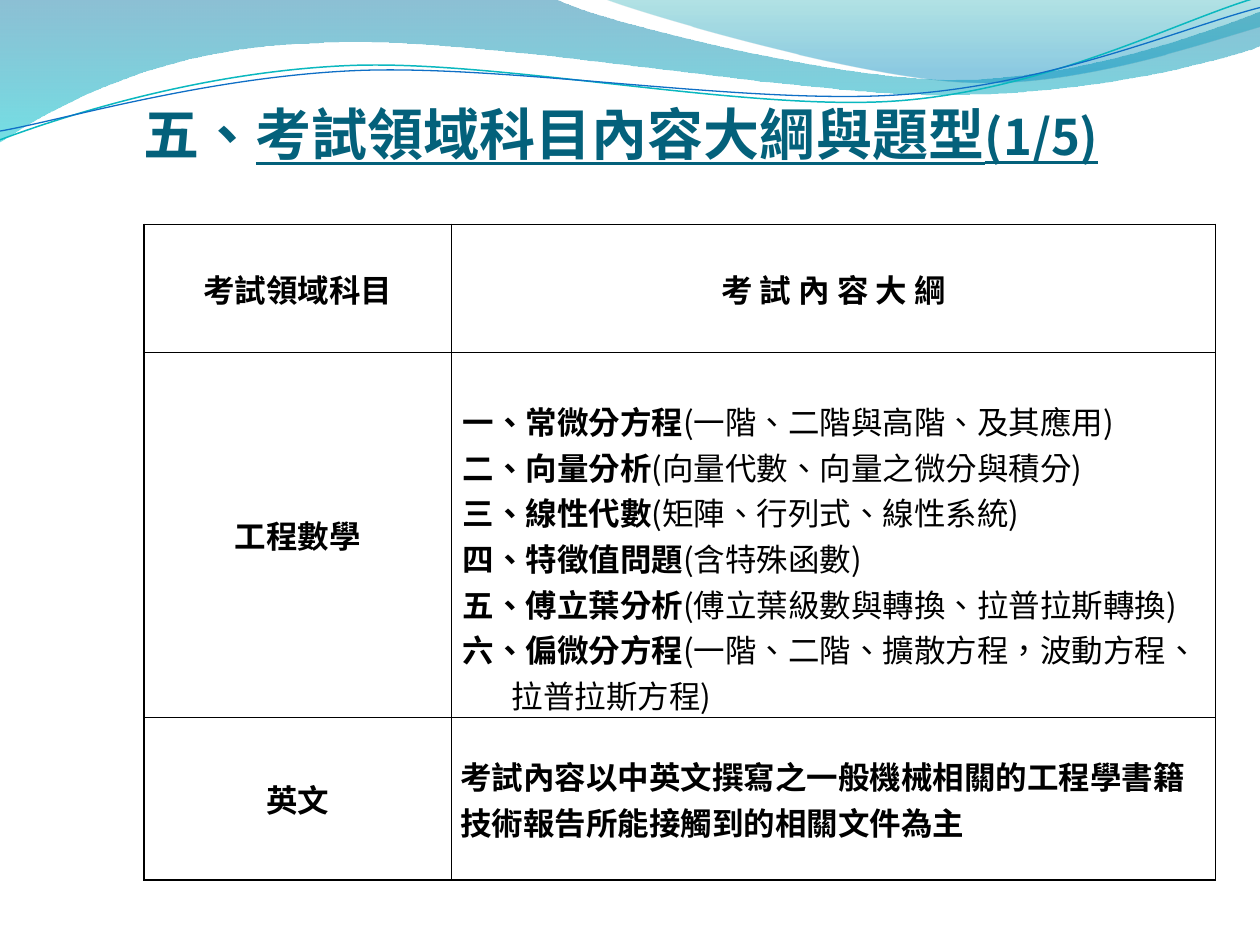
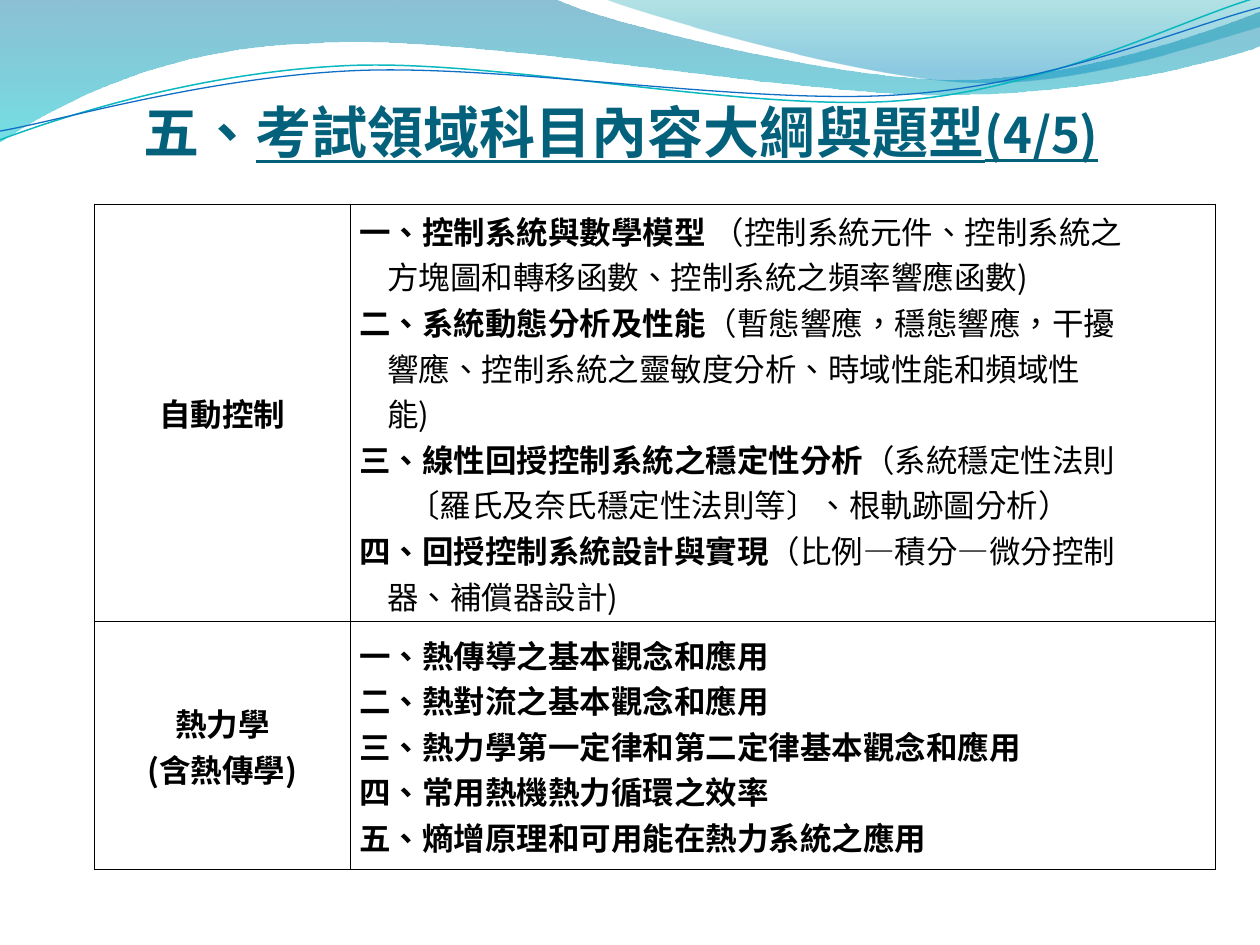
"""Builds two slides outlining the examination subjects and their contents."""
import math
from dataclasses import dataclass, field
from itertools import islice
from typing import Optional

from lxml import etree
from pptx import Presentation
from pptx import util as u
from pptx.dml import color
from pptx.enum import text
from pptx.oxml import ns

WIDTH, HEIGHT = u.Inches(10), u.Inches(7.5)
COLUMN, ROW = WIDTH / 100, HEIGHT / 75
FONT = "Noto Sans CJK SC"
LANGUAGE = "zh-TW"
TITLE_ONLY = 5
COLORS = {
    "title": "04617B", "ink": "000000",
    "deep": "0074A1", "aqua": "00C6CF", "teal": "00A1A9", "sky": "008BBF",
    "teal_line": "0AB8BF", "blue_line": "0F6FC6",
}
TITLE_FORMAT = {"name": FONT, "size": u.Pt(32), "bold": True}
CELL_FORMAT = {"name": FONT, "size": u.Pt(18)}
CELL_MARGINS = {"margin_left": u.Inches(0.07), "margin_right": u.Inches(0.07),
                "margin_top": 0, "margin_bottom": 0}


@dataclass
class Stop:
    """One gradient stop: place, colour and opacity in percent."""
    position: float
    color: str
    opacity: int


@dataclass
class Wave:
    """An outline of lines (2 numbers) and curves (6 numbers) in grid units."""
    start: tuple
    segments: list
    stops: list = field(default_factory=list)
    line: Optional[str] = None
    weight: float = 0
    pivot: tuple = (0, 0)
    tilt: float = 0


@dataclass
class Line:
    """A line of cell text: bold words, then plain words."""
    bold: str = ""
    plain: str = ""
    indent: float = 0


@dataclass
class Cell:
    """The lines of a cell and the way they are placed."""
    lines: list
    centered: bool = False
    lead: float = 0


@dataclass
class Outline:
    """A page: title number and place, table place, sizes and contents."""
    number: str
    title_top: float
    title_width: float
    title_base: float
    left: float
    top: float
    columns: list
    rows: list
    cells: list


WAVES = [
    Wave((0, 0), [(44, -0.1), (47.6, 1.7, 66.4, 6.3, 75.8, 6.3),
                  (85.3, 6.3, 95.8, 2.6, 100, 0.9), (100.1, 3.6),
                  (98.3, 4.4, 87, 7.6, 74.6, 7.5), (62.2, 7.5, 38.2, 2.8, 25.7, 3.4),
                  (12.9, 3.6, 4.6, 8.3, -0.1, 11.3), (0, 0)],
         [Stop(0, "deep", 45), Stop(1, "aqua", 55)]),
    Wave((47.9, -0.1), [(50.9, 1.1, 68.2, 6.2, 76.9, 6.5),
                        (85.6, 6.9, 96.1, 3.2, 100, 2.1), (100, 0), (47.9, -0.1)],
         [Stop(0, "teal", 30), Stop(0.8, "sky", 45)]),
    Wave((0, 11.1), [(4.8, 9.3, 15.8, 5.7, 27.7, 5.2), (39.5, 4.7, 59.3, 8.9, 71.3, 8),
                     (83.3, 7.1, 93.8, 1.5, 99.8, -0.2)],
         line="teal_line", weight=0.85, pivot=(49.9, 5.75), tilt=-2.7),
    Wave((0, 10.4), [(4.7, 9.6, 16.4, 6.1, 28.3, 5.6), (40.3, 5.1, 59.7, 8.4, 71.7, 7.5),
                     (83.6, 6.7, 94.1, 2.1, 100, 0.6)],
         line="blue_line", weight=0.75, pivot=(49.95, 5.9), tilt=-2.7),
]


def heading(*words: str) -> Cell:
    """Return a centred bold cell."""
    return Cell([Line(word) for word in words], centered=True)


OUTLINES = [
    Outline("(1/5)", 6.8, 85.5, 13.2, 11.43, 17.8, [24.4, 60.65], [10.2, 26.5, 12.9], [
        [heading("考試領域科目"), heading("考 試 內 容 大 綱")],
        [heading("工程數學"), Cell([
            Line("一、常微分方程", "(一階、二階與高階、及其應用)", 0.2),
            Line("二、向量分析", "(向量代數、向量之微分與積分)", 0.2),
            Line("三、線性代數", "(矩陣、行列式、線性系統)", 0.2),
            Line("四、特徵值問題", "(含特殊函數)", 0.2),
            Line("五、傅立葉分析", "(傅立葉級數與轉換、拉普拉斯轉換)", 0.2),
            Line("六、偏微分方程", "(一階、二階、擴散方程，波動方程、", 0.2),
            Line(plain="拉普拉斯方程)", indent=4.1)], lead=3.6)],
        [heading("英文"), Cell([
            Line("考試內容以中英文撰寫之一般機械相關的工程學書籍技術報告所能接觸到的相關文件為主")])],
    ]),
    Outline("(4/5)", 5.2, 86.1, 13.05, 7.5, 16.23, [20.3, 68.65], [33.1, 19.7], [
        [heading("自動控制"), Cell([
            Line("一、控制系統與數學模型 ", "（控制系統元件、控制系統之"),
            Line(plain="方塊圖和轉移函數、控制系統之頻率響應函數)", indent=2.25),
            Line("二、系統動態分析及性能", "（暫態響應，穩態響應，干擾"),
            Line(plain="響應、控制系統之靈敏度分析、時域性能和頻域性", indent=2.25),
            Line(plain="能)", indent=2.25),
            Line("三、線性回授控制系統之穩定性分析", "（系統穩定性法則"),
            Line(plain="〔羅氏及奈氏穩定性法則等〕、根軌跡圖分析）", indent=3.9),
            Line("四、回授控制系統設計與實現", "（比例—積分—微分控制"),
            Line(plain="器、補償器設計)", indent=2.25)])],
        [heading("熱力學", "(含熱傳學)"), Cell([
            Line("一、熱傳導之基本觀念和應用"),
            Line("二、熱對流之基本觀念和應用"),
            Line("三、熱力學第一定律和第二定律基本觀念和應用"),
            Line("四、常用熱機熱力循環之效率"),
            Line("五、熵增原理和可用能在熱力系統之應用")])],
    ]),
]


def across(columns: float) -> int:
    """Turn grid columns into a length."""
    return round(columns * COLUMN)


def down(rows: float) -> int:
    """Turn grid rows into a length."""
    return round(rows * ROW)


def rgb(name: str) -> color.RGBColor:
    """Look up a colour."""
    return color.RGBColor.from_string(COLORS[name])


def assign(target, values: dict) -> None:
    """Set several attributes of an object."""
    for name, value in values.items():
        setattr(target, name, value)


def add_span(para, words: str, ink: str, values: dict) -> None:
    """Add a formatted run, with its font and language for East Asian text."""
    span = para.add_run()
    span.text = words
    assign(span.font, values)
    span.font.color.rgb = rgb(ink)
    properties = span._r.get_or_add_rPr()
    properties.set("lang", LANGUAGE)
    etree.SubElement(properties, ns.qn("a:ea"), typeface=FONT)


def level_points(wave: Wave) -> list:
    """Return the points of a wave before it is tilted about its pivot."""
    numbers = [*wave.start, *(n for segment in wave.segments for n in segment)]
    cos, sin = math.cos(math.radians(wave.tilt)), math.sin(math.radians(wave.tilt))
    left, top = wave.pivot
    offsets = [(x - left, y - top) for x, y in zip(numbers[::2], numbers[1::2])]
    return [(across(left + x * cos + y * sin), down(top - x * sin + y * cos))
            for x, y in offsets]


def bend(shape, segments: list) -> None:
    """Join each three line nodes of a curved segment into one curve."""
    nodes = iter(list(shape.element.iter(ns.qn("a:lnTo"))))
    for segment in segments:
        group = list(islice(nodes, len(segment) // 2))
        if len(group) == 3:
            curve = etree.Element(ns.qn("a:cubicBezTo"))
            group[0].addprevious(curve)
            for node in group:
                curve.append(node[0])
                node.getparent().remove(node)


def draw_wave(page, wave: Wave):
    """Draw a band or a thin curve and return its shape."""
    first, *rest = level_points(wave)
    builder = page.shapes.build_freeform(*first)
    builder.add_line_segments(rest, close=bool(wave.stops))
    shape = builder.convert_to_shape()
    bend(shape, wave.segments)
    shape.rotation = wave.tilt
    shape.shadow.inherit = False
    if wave.line:
        shape.fill.background()
        shape.line.color.rgb = rgb(wave.line)
        shape.line.width = u.Pt(wave.weight)
        return shape
    shape.line.fill.background()
    shape.fill.gradient()
    shape.fill.gradient_angle = 270
    for target, stop in zip(shape.fill.gradient_stops, wave.stops):
        target.position = stop.position
        target.color.rgb = rgb(stop.color)
    for tint, stop in zip(shape.element.spPr.iter(ns.qn("a:srgbClr")), wave.stops):
        etree.SubElement(tint, ns.qn("a:alpha"), val=str(stop.opacity * 1000))
    return shape


def share_waves(deck, page) -> None:
    """Draw the waves and hand them to the slide master."""
    tree = deck.slide_master.shapes.element
    for index, wave in enumerate(WAVES, start=2):
        tree.insert(index, draw_wave(page, wave).element)


def write_title(page, outline: Outline) -> None:
    """Place and fill the title."""
    box, height = page.shapes.title, 12.5
    assign(box, {"left": across(11.4), "top": down(outline.title_top),
                 "width": across(outline.title_width), "height": down(height)})
    assign(box.text_frame, {
        "margin_left": 0, "margin_right": 0, "margin_top": u.Inches(0.05),
        "margin_bottom": down(outline.title_top + height - outline.title_base),
        "vertical_anchor": text.MSO_ANCHOR.BOTTOM, "word_wrap": True,
        "auto_size": text.MSO_AUTO_SIZE.NONE})
    para = box.text_frame.paragraphs[0]
    para.alignment = text.PP_ALIGN.LEFT
    underlined = TITLE_FORMAT | {"underline": True}
    add_span(para, "五、", "title", TITLE_FORMAT)
    add_span(para, "考試領域科目內容大綱與題型", "title", underlined)
    add_span(para, outline.number, "title", underlined | {"size": u.Pt(28)})


def fill_cell(target, cell: Cell) -> None:
    """Write the lines of a table cell."""
    target.fill.background()
    assign(target, CELL_MARGINS | {"margin_top": down(cell.lead)})
    target.vertical_anchor = text.MSO_ANCHOR.TOP if cell.lead else text.MSO_ANCHOR.MIDDLE
    frame = target.text_frame
    for index, line in enumerate(cell.lines):
        para = frame.add_paragraph() if index else frame.paragraphs[0]
        para.alignment = text.PP_ALIGN.CENTER if cell.centered else text.PP_ALIGN.LEFT
        if line.indent:
            para._p.get_or_add_pPr().set("marL", str(across(line.indent)))
        for words, bold in ((line.bold, True), (line.plain, False)):
            if words:
                add_span(para, words, "ink", CELL_FORMAT | {"bold": bold})


def draw_borders(frame) -> None:
    """Give every cell thin borders on its four sides."""
    for cell in frame.element.iter(ns.qn("a:tcPr")):
        for index, side in enumerate("LRTB"):
            border = etree.Element(ns.qn(f"a:ln{side}"), w=str(u.Pt(1)))
            fill = etree.SubElement(border, ns.qn("a:solidFill"))
            etree.SubElement(fill, ns.qn("a:srgbClr"), val=COLORS["ink"])
            cell.insert(index, border)


def add_outline_table(page, outline: Outline) -> None:
    """Add the table of subjects and contents."""
    frame = page.shapes.add_table(
        len(outline.rows), len(outline.columns), across(outline.left), down(outline.top),
        across(sum(outline.columns)), down(sum(outline.rows)))
    table = frame.table
    assign(table, {"first_row": False, "horz_banding": False})
    for column, width in zip(table.columns, outline.columns):
        column.width = across(width)
    for row, height, cells in zip(table.rows, outline.rows, outline.cells):
        row.height = down(height)
        for target, cell in zip(row.cells, cells):
            fill_cell(target, cell)
    draw_borders(frame)


def main() -> None:
    """Build and save the deck."""
    deck = Presentation()
    deck.slide_width, deck.slide_height = WIDTH, HEIGHT
    for index, outline in enumerate(OUTLINES):
        page = deck.slides.add_slide(deck.slide_layouts[TITLE_ONLY])
        if index == 0:
            share_waves(deck, page)
        write_title(page, outline)
        add_outline_table(page, outline)
    deck.save("out.pptx")


if __name__ == "__main__":
    main()
